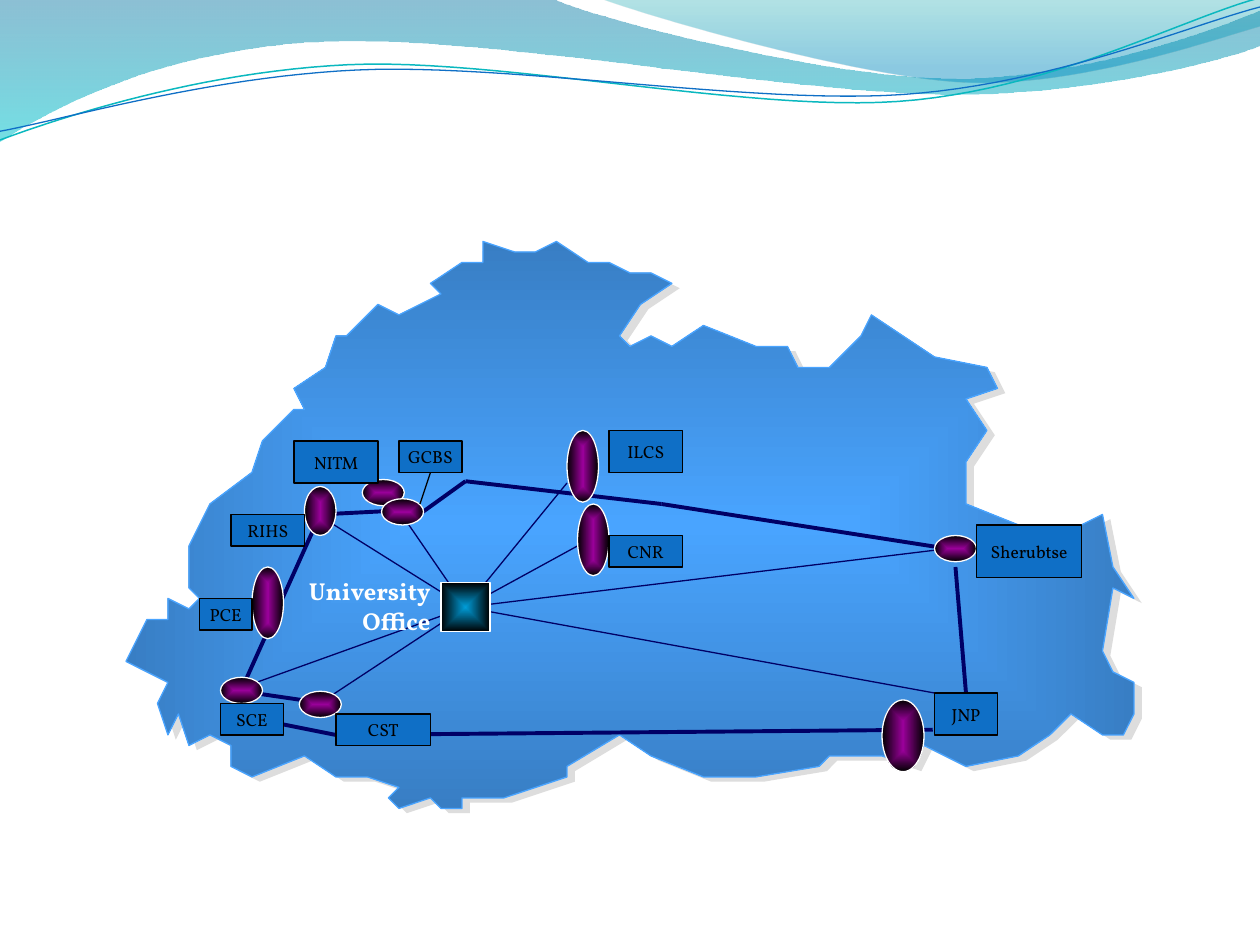
from lxml import etree
from pptx import Presentation
from pptx.dml.color import RGBColor
from pptx.enum.shapes import MSO_CONNECTOR, MSO_SHAPE
from pptx.enum.text import MSO_ANCHOR, PP_ALIGN
from pptx.oxml.ns import qn
from pptx.util import Pt

RECT, OVAL = MSO_SHAPE.RECTANGLE, MSO_SHAPE.OVAL
STRAIGHT = MSO_CONNECTOR.STRAIGHT
MIDDLE = MSO_ANCHOR.MIDDLE
CENTER, RIGHT = PP_ALIGN.CENTER, PP_ALIGN.RIGHT
NAVY, BLUE, BLACK, WHITE = "000066", "0F6FC6", "000000", "FFFFFF"
PURPLE, CYAN, SKY = "990099", "009DD9", "49A4FF"
GRID = 6  # the map outline lies on a 6 pt grid


def rgb(color):
    return RGBColor.from_string(color)


def write(shape, text, size=10, color=BLACK, bold=False, align=CENTER, wrap=False, font="Vollkorn"):
    tf = shape.text_frame
    tf.word_wrap = wrap
    tf.vertical_anchor = MIDDLE
    p = tf.paragraphs[0]
    p.alignment = align
    r = p.add_run()
    r.text = text
    r.font.name, r.font.size, r.font.bold = font, Pt(size), bold
    r.font.color.rgb = rgb(color)
    return tf


def set_gradient(shape, stops, path=None):
    """Stops are (position, colour, opacity); without a path the gradient runs down."""
    shape.fill.solid()
    solid = shape._element.spPr.find(qn("a:solidFill"))
    grad = etree.Element(qn("a:gradFill"), rotWithShape="1")
    stop_list = etree.SubElement(grad, qn("a:gsLst"))
    for position, color, opacity in stops:
        stop = etree.SubElement(stop_list, qn("a:gs"), pos=str(position * 1000))
        clr = etree.SubElement(stop, qn("a:srgbClr"), val=color)
        if opacity < 100:
            etree.SubElement(clr, qn("a:alpha"), val=str(opacity * 1000))
    if path:
        focus = etree.SubElement(grad, qn("a:path"), path=path)
        etree.SubElement(focus, qn("a:fillToRect"), **dict.fromkeys("ltrb", "50000"))
    else:
        etree.SubElement(grad, qn("a:lin"), ang="5400000", scaled="0")
    solid.getparent().replace(solid, grad)


def trace(start, segments, steps=24):
    """One point is a line, three a Bezier curve, two a curve that goes on smoothly."""
    points, handle = [start], start
    for segment in segments:
        if len(segment) == 1:
            points += segment
            continue
        x, y = points[-1]
        if len(segment) == 2:
            segment = [(2 * x - handle[0], 2 * y - handle[1]), *segment]
        handle = segment[1]
        controls = [(x, y), *segment]
        for i in range(1, steps + 1):
            t = i / steps
            weights = ((1 - t) ** 3, 3 * t * (1 - t) ** 2, 3 * t * t * (1 - t), t ** 3)
            points.append(tuple(sum(w * c[axis] for w, c in zip(weights, controls))
                                for axis in (0, 1)))
    return points


class Canvas:
    def __init__(self, slide):
        self.s = slide

    def style(self, sp, fill=None, line=None, width=0.75, gradient=None, path=None):
        sp.shadow.inherit = False
        if gradient:
            set_gradient(sp, gradient, path)
        elif fill:
            sp.fill.solid()
            sp.fill.fore_color.rgb = rgb(fill)
        else:
            sp.fill.background()
        if line:
            sp.line.color.rgb = rgb(line)
            sp.line.width = Pt(width)
        else:
            sp.line.fill.background()
        return sp

    def outline(self, points, close=True, **look):
        (x, y), *rest = [(Pt(px), Pt(py)) for px, py in points]
        builder = self.s.shapes.build_freeform(x, y)
        builder.add_line_segments(rest, close=close)
        return self.style(builder.convert_to_shape(), **look)

    def shape(self, kind, box, **look):
        return self.style(self.s.shapes.add_shape(kind, *map(Pt, box)), **look)

    def node(self, kind, box, color):
        self.shape(kind, box, line=WHITE, path="shape",
                   gradient=[(0, color, 100), (100, BLACK, 100)])

    def label(self, text, *box):
        write(self.shape(RECT, box, fill=BLUE, line=BLACK), text)

    def link(self, start, end, width=0.75, color=NAVY):
        c = self.s.shapes.add_connector(STRAIGHT, *map(Pt, start + end))
        c.line.color.rgb = rgb(color)
        c.line.width = Pt(width)
        etree.SubElement(c._element.spPr, qn("a:effectLst"))

    def chain(self, points, **look):
        for start, end in zip(points, points[1:]):
            self.link(start, end, **look)

    def text(self, text, *box, **form):
        tf = write(self.s.shapes.add_textbox(*map(Pt, box)), text, wrap=True, **form)
        tf.margin_left = tf.margin_right = tf.margin_top = tf.margin_bottom = 0


prs = Presentation()
prs.slide_width, prs.slide_height = Pt(720), Pt(540)
canvas = Canvas(prs.slides.add_slide(prs.slide_layouts[6]))

# Waves across the top
canvas.outline(trace((0, 0), [
    [(317, 0)], [(343, 12), (478, 45), (546, 45)], [(690, 19), (720, 6)],
    [(720, 26)], [(708, 32), (626, 55), (537, 54)], [(275, 20), (185, 24)],
    [(33, 60), (0, 81)]]), gradient=[(0, "0074A1", 45), (100, "00C6CF", 55)])
canvas.outline(trace((345, 0), [
    [(366, 8), (491, 45), (554, 47)], [(692, 23), (720, 15)], [(720, 0)]]),
    gradient=[(0, "00A1A9", 30), (80, "008BBF", 45)])
canvas.outline(trace((0, 80), [
    [(35, 67), (114, 41), (199, 37)], [(427, 64), (513, 58)], [(675, 11), (719, -1)]]),
    close=False, line="0AB8BF", width=0.85)
canvas.outline(trace((0, 75), [
    [(34, 69), (118, 44), (204, 40)], [(430, 60), (516, 54)], [(678, 15), (720, 4)]]),
    close=False, line=BLUE)

# Map with its offset shadow, in grid steps
MAP = [
    (12, 63), (14, 59), (16, 59), (16, 57), (18, 58), (19, 57), (18, 56), (18, 52), (20, 48),
    (24, 45), (25, 42), (28, 39), (29, 39), (28, 37), (31, 35), (32, 32), (33, 32), (36, 29),
    (38, 30), (42, 28), (41, 27), (44, 25), (46, 25), (46, 23), (49, 24), (51, 24), (53, 23),
    (56, 25), (58, 25), (60, 26), (62, 26), (64, 27), (61, 29), (59, 32), (60, 33), (62, 32),
    (64, 33), (67, 31), (72, 33), (75, 33), (76, 35), (79, 35), (82, 32), (83, 30), (89, 34),
    (94, 35), (95, 37), (92, 38), (94, 41), (92, 44), (92, 48), (97, 50), (103, 50), (105, 49),
    (106, 54), (108, 57), (106, 56), (105, 62), (106, 64), (108, 65), (108, 68), (107, 70),
    (105, 70), (102, 68), (100, 70), (97, 72), (92, 73), (88, 71), (87, 73), (84, 72), (79, 72),
    (78, 73), (72, 74), (67, 74), (62, 72), (59, 70), (54, 73), (54, 74), (48, 76), (44, 76),
    (44, 77), (42, 77), (41, 76), (38, 77), (37, 76), (38, 75), (35, 74), (32, 74), (29, 72),
    (24, 74), (22, 73), (22, 71), (20, 70), (18, 71), (17, 68), (16, 70), (15, 67), (16, 65)]
border = [(x * GRID, y * GRID) for x, y in MAP]
canvas.outline([(x + 4.5, y + 2.7) for x, y in border], fill="DDDDDD")
canvas.outline(border, line=SKY, path="rect", gradient=[(0, SKY, 100), (100, "387EC4", 100)])

# Thin links meet at the university office
OFFICE, OFFICE_SIZE = (266, 347), 28
for college in [(138, 393), (184, 401), (183, 295), (233, 299), (324, 276), (330, 312),
                (546, 313), (534, 396)]:
    canvas.link(college, OFFICE)

# Thick ring between the colleges
for route in [[(138, 394), (183, 294), (222, 292), (234, 298), (266, 275), (378, 288), (551, 315)],
              [(186, 402), (138, 395)], [(162, 414), (192, 420), (533, 417)],
              [(546, 324), (552, 396)]]:
    canvas.chain(route, width=2.25)

# College nodes by size, then the office
NODES = {(24, 15): [(207, 274), (218, 285), (171, 395), (534, 306), (126, 387)],
         (18, 41): [(324, 246), (330, 288), (144, 324)],
         (18, 28): [(174, 278)],
         (24, 41): [(504, 400)]}
for size, places in NODES.items():
    for place in places:
        canvas.node(OVAL, place + size, PURPLE)
corner = tuple(c - OFFICE_SIZE / 2 for c in OFFICE)
canvas.node(RECT, corner + (OFFICE_SIZE, OFFICE_SIZE), CYAN)
canvas.text("University Office", 162, 329, 84, 34, size=14, color=WHITE, bold=True, align=RIGHT)

# College labels
canvas.link((240, 288), (246, 270), color=BLACK)
for label in [("Sherubtse", 558, 300, 60, 30), ("ILCS", 348, 246, 42, 24),
              ("NITM", 168, 252, 48, 24), ("GCBS", 228, 252, 36, 18),
              ("RIHS", 132, 294, 42, 18), ("CNR", 348, 306, 42, 18),
              ("PCE", 114, 342, 30, 18), ("CST", 192, 408, 54, 18),
              ("SCE", 126, 402, 36, 18), ("JNP", 534, 396, 36, 24)]:
    canvas.label(*label)

prs.save("out.pptx")
